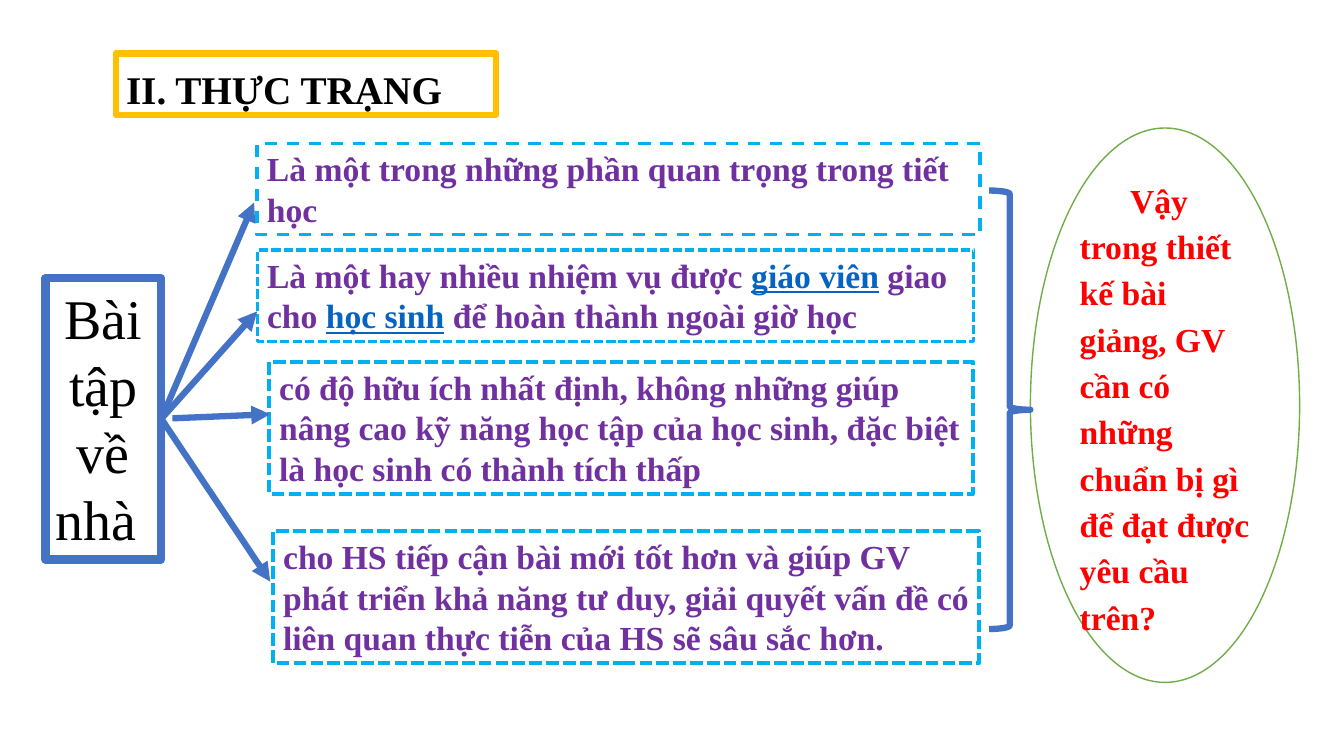
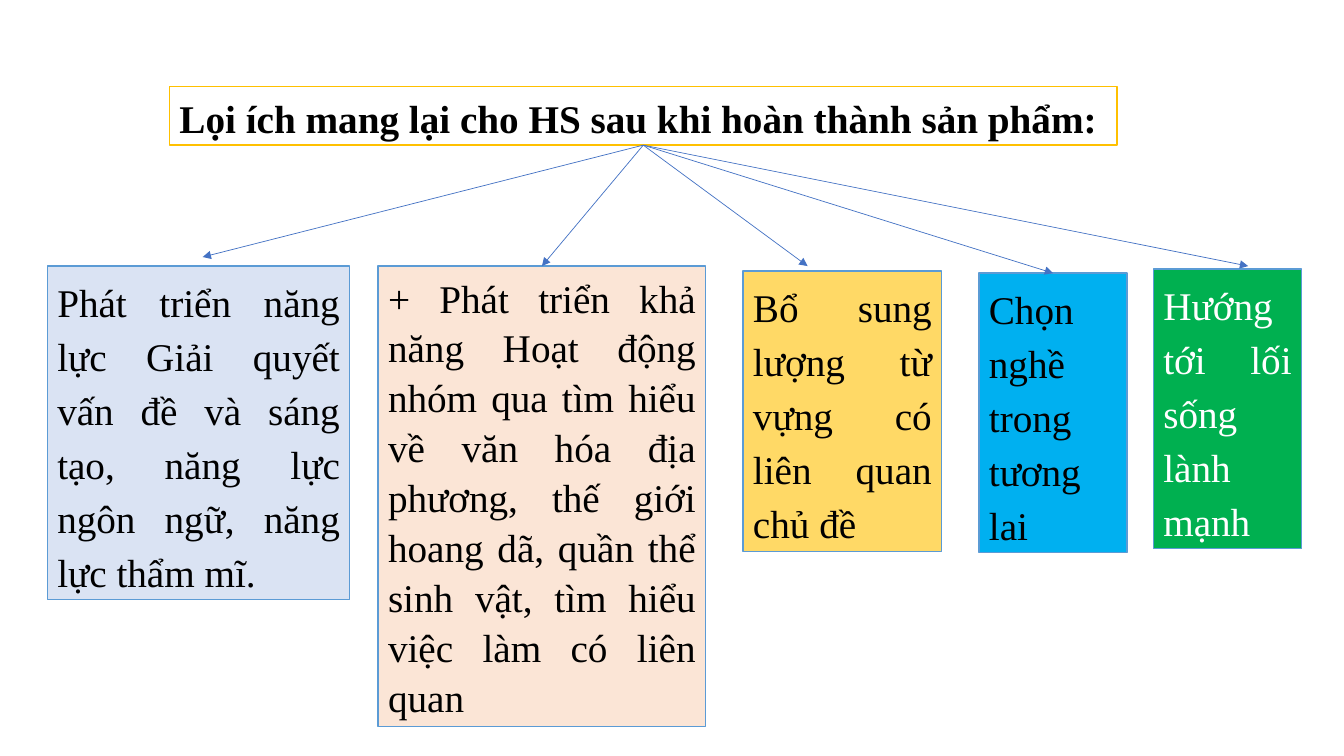
"""Build two slides: the present state of homework, and what pupils gain from it."""
from lxml.etree import SubElement
from pptx import Presentation
from pptx.dml.color import RGBColor
from pptx.enum.dml import MSO_LINE
from pptx.enum.shapes import MSO_CONNECTOR, MSO_SHAPE as SHAPE
from pptx.enum.text import MSO_ANCHOR as ANCHOR, MSO_AUTO_SIZE, PP_ALIGN as ALIGN
from pptx.oxml.ns import qn
from pptx.util import Inches, Pt

FONT = "Times New Roman"
WHITE, BLACK, RED = "FFFFFF", "000000", "FF0000"
GOLD, BLUE, SKY, EDGE = "FFC000", "4472C4", "00B0F0", "5B9BD5"
PURPLE, LINK, OLIVE = "7030A0", "0563C1", "70AD47"
RIGHT, TOP, BOTTOM = 3, 0, 2

STATE_TITLE = "II. THỰC TRẠNG"
TOPIC = "Bài tập về nhà "
QUESTION = ("Vậy trong thiết kế bài giảng, GV cần có những chuẩn bị gì "
            "để đạt được yêu cầu trên?")
ROLES = [
    (["Là một trong những phần quan trọng trong tiết học"],
     (2.55, 1.42, 7.17, 0.91), 2.25, MSO_LINE.DASH, (2.52, 2.01)),
    (["Là một hay nhiều nhiệm vụ được ", ("giáo viên", LINK), " giao cho ",
      ("học sinh", LINK), " để hoàn thành ngoài giờ học"],
     (2.55, 2.48, 7.11, 0.91), 2.25, MSO_LINE.SQUARE_DOT, (2.55, 3.09)),
    (["có độ hữu ích nhất định, không những giúp nâng cao kỹ năng học tập "
      "của học sinh, đặc biệt là học sinh có thành tích thấp"],
     (2.67, 3.59, 6.98, 1.31), 3, MSO_LINE.SQUARE_DOT, (2.68, 4.11)),
    (["cho HS tiếp cận bài mới tốt hơn và giúp GV phát triển khả năng tư duy, "
      "giải quyết vấn đề có liên quan thực tiễn của HS sẽ sâu sắc hơn."],
     (2.71, 5.27, 7, 1.31), 3, MSO_LINE.SQUARE_DOT, (2.68, 5.77)),
]

GAINS_TITLE = "Lọi ích mang lại cho HS sau khi hoàn thành sản phẩm:"
GAINS = [
    ("Phát triển năng lực Giải quyết vấn đề và sáng tạo, năng lực ngôn ngữ, "
     "năng lực thẩm mĩ.", (0.47, 2.64, 3, 3.31), "DAE3F3", BLACK, 1.15, (2.01, 2.55)),
    ("+ Phát triển khả năng Hoạt động nhóm qua tìm hiểu về văn hóa địa phương, "
     "thế giới hoang dã, quần thể sinh vật, tìm hiểu việc làm có liên quan",
     (3.75, 2.64, 3.25, 4.57), "FBE5D6", BLACK, 1.06, None),
    ("Bổ sung lượng từ vựng có liên quan chủ đề",
     (7.37, 2.69, 1.97, 2.78), "FFD966", BLACK, 1.15, (8.01, 2.64)),
    ("Chọn nghề trong tương lai",
     (9.71, 2.71, 1.47, 2.77), SKY, BLACK, 1.15, None),
    ("Hướng tới lối sống lành mạnh",
     (11.44, 2.67, 1.47, 2.77), "00B050", WHITE, 1.15, (12.38, 2.64)),
]


def rgb(value):
    return RGBColor.from_string(value)


def write(sp, parts, size=28, color=BLACK, bold=False, align=ALIGN.LEFT,
          anchor=ANCHOR.TOP, spacing=1.0, after=0, indent=0):
    tf = sp.text_frame
    tf.word_wrap, tf.auto_size, tf.vertical_anchor = True, MSO_AUTO_SIZE.NONE, anchor
    p = tf.paragraphs[0]
    p.alignment, p.line_spacing = align, spacing
    p.space_before, p.space_after = Pt(0), Pt(after)
    if indent:
        p._p.get_or_add_pPr().set("indent", str(Inches(indent)))
    for part in [parts] if isinstance(parts, str) else parts:
        text, ink = (part, color) if isinstance(part, str) else part
        r = p.add_run()
        r.text = text
        r.font.name, r.font.size, r.font.bold = FONT, Pt(size), bold
        r.font.color.rgb = rgb(ink)
        r.font.underline = ink == LINK


def paint(sp, fill, line, width, dash=None):
    if fill:
        sp.fill.solid()
        sp.fill.fore_color.rgb = rgb(fill)
    else:
        sp.fill.background()
    sp.line.color.rgb = rgb(line)
    sp.line.width = Pt(width)
    if dash:
        sp.line.dash_style = dash


def add_title(slide, text, at, width, **fmt):
    sp = slide.shapes.title
    sp.left, sp.top, sp.width, sp.height = map(Inches, at)
    paint(sp, WHITE, GOLD, width)
    write(sp, text, bold=True, after=8, **fmt)
    return sp


def add_box(slide, at, fill, line, width, dash=None, kind=SHAPE.RECTANGLE):
    sp = slide.shapes.add_shape(kind, *map(Inches, at))
    sp.shadow.inherit = False
    paint(sp, fill, line, width, dash)
    return sp


def add_arrow(slide, start, end, width):
    """Draw an arrow; each end is a point or a (shape, side) pair."""
    points = [(0, 0) if hasattr(e[0], "shape_id") else e for e in (start, end)]
    cx = slide.shapes.add_connector(
        MSO_CONNECTOR.STRAIGHT, *(Inches(v) for point in points for v in point))
    for e, join in ((start, cx.begin_connect), (end, cx.end_connect)):
        if hasattr(e[0], "shape_id"):
            join(*e)
    cx.line.color.rgb = rgb(BLUE)
    cx.line.width = Pt(width)
    SubElement(cx.line._get_or_add_ln(), qn("a:tailEnd"), type="triangle")
    SubElement(cx._element.spPr, qn("a:effectLst"))


def build_state(slide):
    add_title(slide, STATE_TITLE, (1.15, 0.53, 3.77, 0.61), 4.5, spacing=1.15)
    topic = add_box(slide, (0.45, 2.76, 1.15, 2.79), WHITE, BLUE, 6)
    write(topic, TOPIC, size=40, align=ALIGN.CENTER)
    for parts, at, width, dash, _ in ROLES:
        write(add_box(slide, at, WHITE, SKY, width, dash), parts,
              size=24, color=PURPLE, bold=True)
    for i, role in enumerate(ROLES):
        add_arrow(slide, (1.71, 4.15) if i == 2 else (topic, RIGHT), role[-1], 4.5)
    question = add_box(slide, (10.22, 1.27, 2.67, 5.5), WHITE, OLIVE, 1,
                       kind=SHAPE.OVAL)
    write(question, QUESTION, size=24, color=RED, bold=True, anchor=ANCHOR.MIDDLE,
          spacing=1.15, after=8, indent=0.5)
    add_box(slide, (9.81, 1.89, 0.41, 4.35), None, BLUE, 4.5, kind=SHAPE.RIGHT_BRACE)


def build_gains(slide):
    title = add_title(slide, GAINS_TITLE, (1.68, 0.86, 9.4, 0.58), 1,
                      spacing=1.06, align=ALIGN.JUSTIFY)
    for text, at, fill, ink, spacing, tip in GAINS:
        sp = add_box(slide, at, fill, EDGE, 1)
        write(sp, text, color=ink, align=ALIGN.JUSTIFY, spacing=spacing, after=8)
        add_arrow(slide, (title, BOTTOM), tip or (sp, TOP), 0.5)


def main():
    prs = Presentation()
    prs.slide_width, prs.slide_height = Inches(13.33), Inches(7.5)
    for build in (build_state, build_gains):
        build(prs.slides.add_slide(prs.slide_layouts[5]))
    prs.save("out.pptx")


if __name__ == "__main__":
    main()
